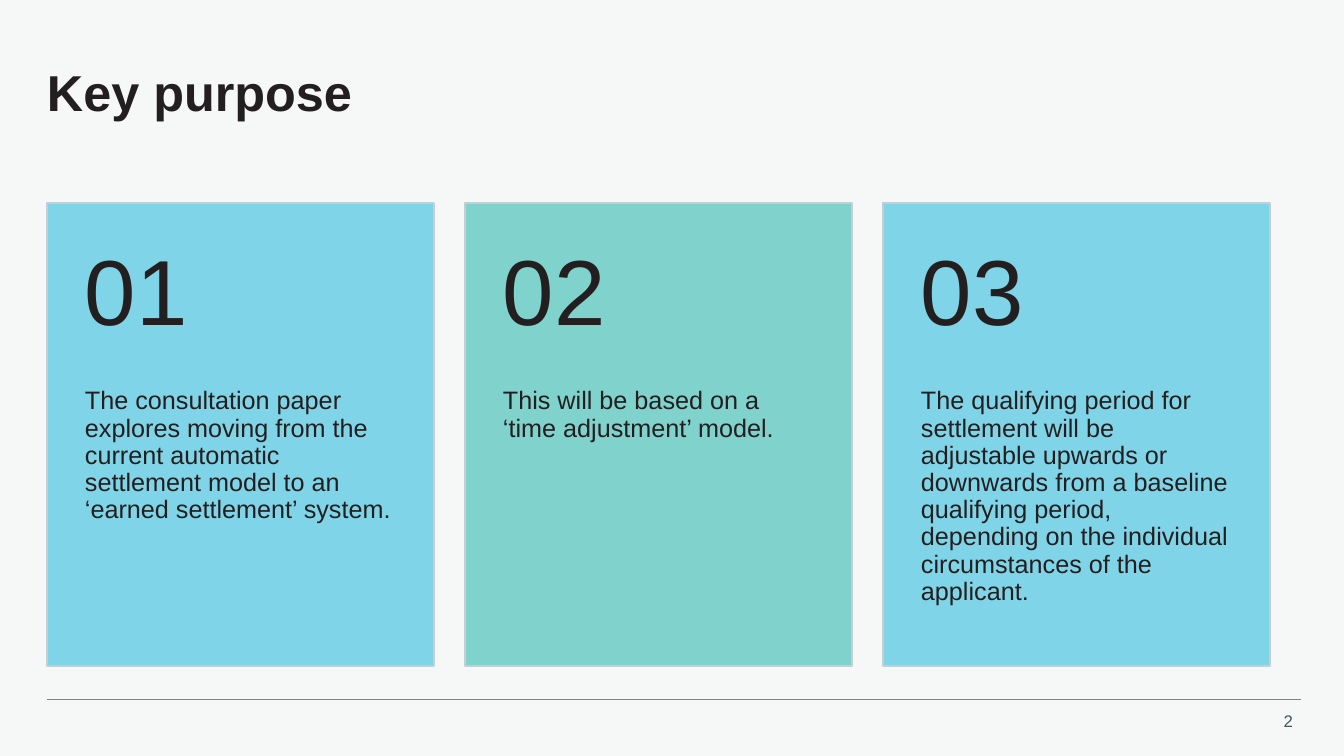
from lxml import etree
from pptx import Presentation
from pptx.dml.color import RGBColor
from pptx.enum.shapes import MSO_CONNECTOR, MSO_SHAPE
from pptx.enum.text import MSO_ANCHOR, MSO_AUTO_SIZE, PP_ALIGN
from pptx.oxml.ns import qn
from pptx.util import Emu, Pt

RECTANGLE = MSO_SHAPE.RECTANGLE
STRAIGHT = MSO_CONNECTOR.STRAIGHT
TOP, MIDDLE = MSO_ANCHOR.TOP, MSO_ANCHOR.MIDDLE
LEFT, RIGHT = PP_ALIGN.LEFT, PP_ALIGN.RIGHT
NO_AUTOFIT = MSO_AUTO_SIZE.NONE

PAPER = RGBColor(0xF6, 0xF8, 0xF8)
INK = RGBColor(0x23, 0x1F, 0x20)
SLATE = RGBColor(0x42, 0x55, 0x63)
RULE_GREY = RGBColor(0x76, 0x86, 0x92)
BORDER_GREY = RGBColor(0xC7, 0xCE, 0xD3)
SKY = RGBColor(0x80, 0xD4, 0xE7)
MINT = RGBColor(0x80, 0xD2, 0xCC)

EMU_PER_PX = 914400 / 100.8
MARGIN = 47
CARD_TOP, CARD_WIDTH, CARD_PITCH = 203, 387, 418
NUMBER_HEIGHT, BODY_HEIGHT = 185, 278

PURPOSES = [
    (SKY, "The consultation paper explores moving from the current automatic "
          "settlement model to an ‘earned settlement’ system."),
    (MINT, "This will be based on a ‘time adjustment’ model."),
    (SKY, "The qualifying period for settlement will be adjustable upwards or "
          "downwards from a baseline qualifying period, depending on the "
          "individual circumstances of the applicant."),
]


def px(*lengths):
    """Turn pixel lengths into EMU."""
    return [Emu(round(length * EMU_PER_PX)) for length in lengths]


def write(frame, text, size, color=INK, bold=False, align=LEFT, anchor=TOP,
          insets=(0, 0, 0, 0), spacing=0.9, wrap=True):
    """Put one formatted paragraph in a frame; insets run left, top, right, bottom."""
    frame.auto_size = NO_AUTOFIT
    frame.word_wrap = wrap
    frame.vertical_anchor = anchor
    (frame.margin_left, frame.margin_top,
     frame.margin_right, frame.margin_bottom) = px(*insets)
    frame.text = text
    paragraph = frame.paragraphs[0]
    paragraph.alignment = align
    paragraph.line_spacing = spacing
    font = paragraph.runs[0].font
    font.name, font.size, font.bold = "Arial", Pt(size), bold
    font.color.rgb = color


class PurposeSlide:
    def __init__(self, presentation):
        title_only = presentation.slide_layouts[5]
        self.slide = presentation.slides.add_slide(title_only)
        self.shapes = self.slide.shapes
        background = self.slide.background.fill
        background.solid()
        background.fore_color.rgb = PAPER

    def title(self, text, left, top, width, height):
        heading = self.shapes.title
        heading.left, heading.top, heading.width, heading.height = px(
            left, top, width, height)
        write(heading.text_frame, text, 36, bold=True, anchor=MIDDLE)

    def text(self, text, left, top, width, height, **style):
        box = self.shapes.add_textbox(*px(left, top, width, height))
        write(box.text_frame, text, **style)

    def panel(self, left, top, width, height, color):
        panel = self.shapes.add_shape(RECTANGLE, *px(left, top, width, height))
        panel.shadow.inherit = False
        panel.fill.solid()
        panel.fill.fore_color.rgb = color
        panel.line.color.rgb = BORDER_GREY
        panel.line.width = Pt(1)

    def card(self, left, number, text, color):
        self.panel(left, CARD_TOP, CARD_WIDTH, NUMBER_HEIGHT + BODY_HEIGHT, color)
        self.text(text, left, CARD_TOP + NUMBER_HEIGHT, CARD_WIDTH, BODY_HEIGHT,
                  size=18, insets=(38, 0, 38, 36))
        self.text(number, left, CARD_TOP, CARD_WIDTH, NUMBER_HEIGHT,
                  size=66, anchor=MIDDLE, insets=(38, 18, 38, 18))

    def rule(self, left, right, y):
        rule = self.shapes.add_connector(STRAIGHT, *px(left, y, right, y))
        rule.line.color.rgb = RULE_GREY
        rule.line.width = Pt(0.5)
        etree.SubElement(rule._element.spPr, qn("a:effectLst"))


def main():
    presentation = Presentation()
    presentation.slide_width, presentation.slide_height = px(1344, 756)
    page = PurposeSlide(presentation)
    page.title("Key purpose", MARGIN, 47, 1257, 96)
    for index, (color, text) in enumerate(PURPOSES):
        page.card(MARGIN + index * CARD_PITCH, f"{index + 1:02}", text, color)
    page.rule(MARGIN, 1301, 699)
    page.text("2", 1262, 706, 41, 30, size=12, color=SLATE, align=RIGHT,
              insets=(10, 5, 10, 5), spacing=1.0, wrap=False)
    presentation.save("out.pptx")


if __name__ == "__main__":
    main()
